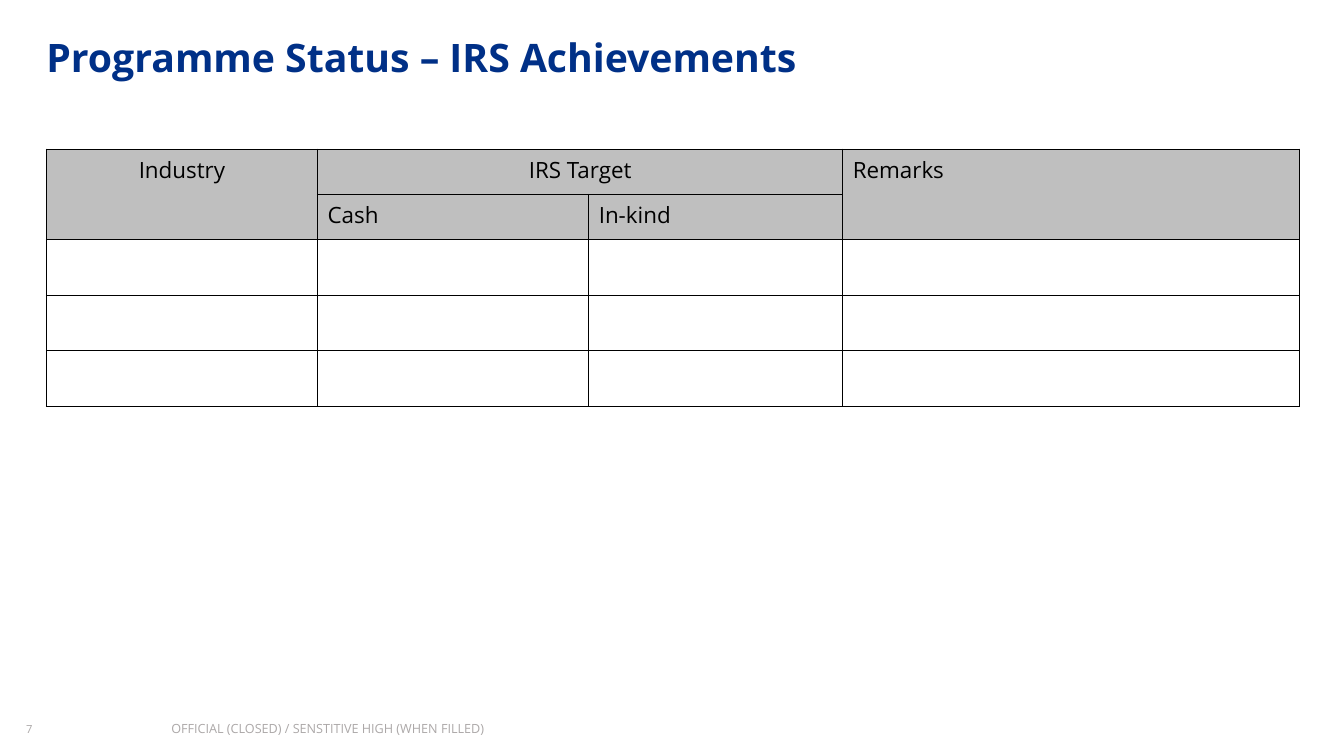
from pptx import Presentation
from pptx import util as u
from pptx.dml.color import RGBColor
from pptx.enum import text
from pptx.oxml import parse_xml
from pptx.oxml.ns import nsdecls


def tint(code):
    return RGBColor.from_string(code)


def write(frame, words, size, color, bold=False, align="LEFT", space=1.0):
    para = frame.paragraphs[0]
    para.text = words
    para.alignment = text.PP_ALIGN[align]
    para.line_spacing = space
    para.font.color.rgb = tint(color)
    look = {"name": "Open Sans", "size": u.Pt(size), "bold": bold}
    for key, value in look.items():
        setattr(para.font, key, value)


deck = Presentation()
deck.slide_width = u.Inches(13.33)
deck.slide_height = u.Inches(7.5)
slide = deck.slides.add_slide(deck.slide_layouts[5])

title = slide.shapes.title
number = slide.shapes.add_textbox(0, 0, 0, 0)
footer = slide.shapes.add_textbox(0, 0, 0, 0)
frames = [
    (title, (0.46, 0.28, 11.02, 0.52), "Programme Status – IRS Achievements", 28, "003087", True, 1.1),
    (number, (0.26, 7.13, 0.79, 0.19), "7", 8, "ACA8A8", False, 1.1),
    (footer, (1.7, 7.13, 5.33, 0.19), "OFFICIAL (CLOSED) / SENSTITIVE HIGH (WHEN FILLED)", 9, "ACA8A8", False, 1.0),
]
for box, place, words, size, color, bold, space in frames:
    for key, value in zip(("left", "top", "width", "height"), place):
        setattr(box, key, u.Inches(value))
    form = {
        "margin_left": 0, "margin_top": 0, "margin_right": 0, "margin_bottom": 0,
        "word_wrap": True, "auto_size": text.MSO_AUTO_SIZE.NONE,
        "vertical_anchor": text.MSO_ANCHOR.MIDDLE,
    }
    for key, value in form.items():
        setattr(box.text_frame, key, value)
    write(box.text_frame, words, size, color, bold, space=space)

widths = [2.69, 2.69, 2.52, 4.53]
heights = [0.45, 0.45, 0.55, 0.55, 0.55]
table = slide.shapes.add_table(
    len(heights), len(widths), u.Inches(0.46), u.Inches(1.48),
    u.Inches(sum(widths)), u.Inches(sum(heights))).table
table.first_row = False
table.horz_banding = False
for col, width in zip(table.columns, widths):
    col.width = u.Inches(width)
for row, height in zip(table.rows, heights):
    row.height = u.Inches(height)

for r, row in enumerate(table.rows):
    for cell in row.cells:
        props = cell._tc.get_or_add_tcPr()
        for side in "LRTB":
            props.append(parse_xml(
                f'<a:ln{side} {nsdecls("a")} w="12700"><a:solidFill>'
                f'<a:srgbClr val="000000"/></a:solidFill></a:ln{side}>'))
        cell.fill.solid()
        cell.fill.fore_color.rgb = tint("BFBFBF" if r < 2 else "FFFFFF")

for first, last in [((0, 0), (1, 0)), ((0, 1), (0, 2)), ((0, 3), (1, 3))]:
    table.cell(*first).merge(table.cell(*last))

heads = [
    (0, 0, "Industry", "CENTER"),
    (0, 1, "IRS Target", "CENTER"),
    (0, 3, "Remarks", "LEFT"),
    (1, 1, "Cash", "LEFT"),
    (1, 2, "In-kind", "LEFT"),
]
for r, c, words, align in heads:
    write(table.cell(r, c).text_frame, words, 16, "000000", align=align)

deck.save("out.pptx")
